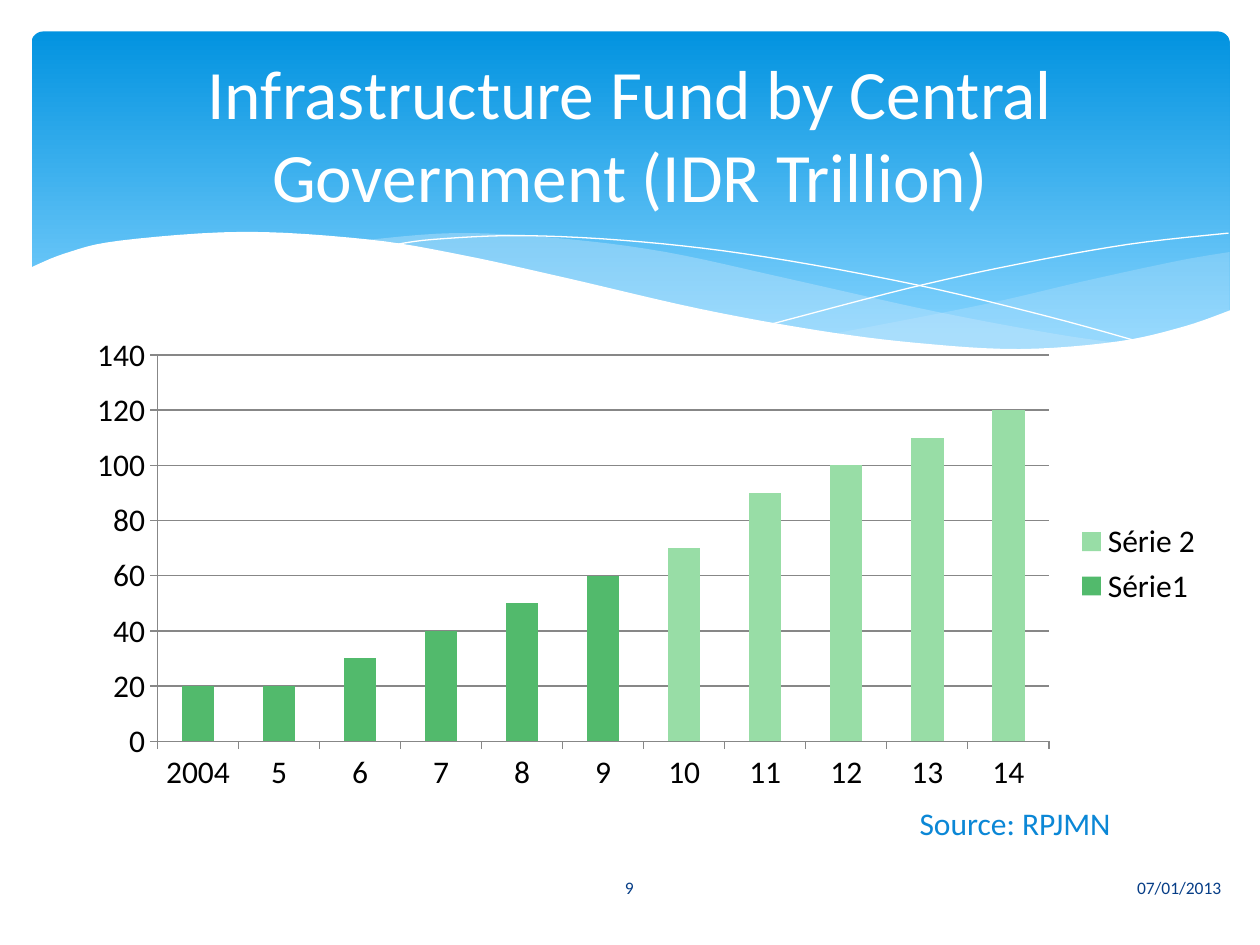
from lxml.etree import SubElement
from pptx import Presentation
from pptx.chart.data import CategoryChartData
from pptx.dml.color import RGBColor
from pptx.enum.chart import XL_CHART_TYPE, XL_LEGEND_POSITION, XL_TICK_MARK
from pptx.enum.shapes import MSO_SHAPE
from pptx.enum.text import MSO_ANCHOR, PP_ALIGN
from pptx.oxml.ns import qn
from pptx.util import Inches, Pt

FONT = "Calibri"
COLS, ROWS = 40, 30
STEPS = 6

YEARS = ["2004", *map(str, range(5, 15))]
SERIES = [
    ("Série1", [20, 20, 30, 40, 50, 60, 0, 0, 0, 0, 0], "52BA6C"),
    ("Série 2", [0, 0, 0, 0, 0, 0, 70, 90, 100, 110, 120], "98DDA6"),
]

# Wave anchors, as (column, row)
RIGHT_TOP = [(39.04, 8), (37.4, 8.28), (34.44, 8.92), (31.16, 9.68), (26.44, 10.6)]
RIGHT_LOW = [(26.44, 10.6), (28.76, 10.88), (32.12, 11.12), (35.24, 10.92),
             (37.4, 10.48), (39.04, 9.88)]
MID_TOP = [(11.44, 7.64), (14.44, 7.4), (17.68, 7.56), (21.12, 8), (25.16, 8.88),
           (29.64, 9.88), (33.48, 10.6), (35.72, 10.92)]
MID_LOW = [(35.72, 10.92), (32.72, 11.12), (29.92, 11.04), (26.6, 10.64),
           (22.64, 9.92), (17.96, 8.88), (14.48, 8.12), (11.44, 7.64)]
FALL = [(12.36, 7.8), (13.76, 7.6), (16.64, 7.48), (20.4, 7.68), (24.32, 8.16),
        (29.08, 9.04), (33.24, 10.04), (36.28, 10.88)]
RISE = [(24.52, 10.28), (28.8, 9.16), (32.24, 8.4), (35.8, 7.76), (39, 7.4)]
EDGE = [(0.92, 8.52), (2.08, 8.04), (3.8, 7.64), (7.72, 7.36), (11.68, 7.6),
        (14.6, 8.08), (17.88, 8.8), (22.2, 9.8), (25.92, 10.48), (29.04, 10.88),
        (32.36, 11.08), (35.48, 10.84), (37.6, 10.36), (39.08, 9.84)]
BASE = [(39.08, 13.16), (0.92, 13.16)]


def color(code):
    return RGBColor.from_string(code)


def curve(knots):
    """Return points on a Catmull-Rom spline through the knots."""
    ends = [knots[0], *knots, knots[-1]]
    points = []
    for a, b, c, d in zip(ends, ends[1:], ends[2:], ends[3:]):
        for step in range(STEPS):
            t = step / STEPS
            points.append(tuple(
                (2 * q + (r - p) * t + (2 * p - 5 * q + 4 * r - s) * t ** 2
                 + (3 * q - p - 3 * r + s) * t ** 3) / 2
                for p, q, r, s in zip(a, b, c, d)))
    return points + [knots[-1]]


class Deck:
    def __init__(self):
        self.prs = Presentation()
        self.prs.slide_width, self.prs.slide_height = Inches(10), Inches(7.5)
        self.slide = self.prs.slides.add_slide(self.prs.slide_layouts[6])
        self.shapes = self.slide.shapes

    def place(self, col, row):
        return (round(col * self.prs.slide_width / COLS),
                round(row * self.prs.slide_height / ROWS))

    def box(self, col, row, wide, high):
        return *self.place(col, row), *self.place(wide, high)

    def panel(self, area, top, bottom):
        shape = self.shapes.add_shape(MSO_SHAPE.ROUNDED_RECTANGLE, *self.box(*area))
        shape.shadow.inherit = False
        shape.adjustments[0] = 0.034
        shape.line.fill.background()
        shape.fill.gradient()
        shape.fill.gradient_angle = 270
        for stop, (spot, code) in zip(shape.fill.gradient_stops, [(0, top), (0.9, bottom)]):
            stop.position, stop.color.rgb = spot, color(code)

    def wave(self, points, fill=None, alpha=100, line=None):
        first, *rest = [self.place(*point) for point in points]
        path = self.shapes.build_freeform(*first)
        path.add_line_segments(rest, close=fill is not None)
        shape = path.convert_to_shape()
        shape.shadow.inherit = False
        for part, code in ((shape.fill, fill), (shape.line.fill, line)):
            if code:
                part.solid()
                part.fore_color.rgb = color(code)
            else:
                part.background()
        if line:
            shape.line.width = Pt(0)
        if alpha < 100:
            tint = shape.fill._xPr.find(".//" + qn("a:srgbClr"))
            SubElement(tint, qn("a:alpha"), val=str(alpha * 1000))

    def text(self, area, words, size, code, align, anchor=MSO_ANCHOR.MIDDLE, wrap=True):
        frame = self.shapes.add_textbox(*self.box(*area)).text_frame
        frame.word_wrap, frame.vertical_anchor = wrap, anchor
        para = frame.paragraphs[0]
        para.text, para.alignment = words, align
        style = {"name": FONT, "size": Pt(size)}
        for key, value in style.items():
            setattr(para.font, key, value)
        para.font.color.rgb = color(code)

    def chart(self, area, cats, series):
        data = CategoryChartData()
        data.categories = cats
        for name, values, _ in series:
            data.add_series(name, values)
        chart = self.shapes.add_chart(
            XL_CHART_TYPE.COLUMN_STACKED, *self.box(*area), data).chart
        chart.has_title = False
        chart.font.name, chart.font.size = FONT, Pt(18)
        chart.font.color.rgb = color("000000")
        chart.has_legend = True
        chart.legend.position = XL_LEGEND_POSITION.RIGHT
        chart.legend.include_in_layout = False
        plot = chart.plots[0]
        plot.gap_width, plot.overlap, plot.vary_by_categories = 150, 100, False
        for bars, (_, _, code) in zip(plot.series, series):
            bars.format.fill.solid()
            bars.format.fill.fore_color.rgb = color(code)
        scale = chart.value_axis
        scale.minimum_scale, scale.maximum_scale, scale.major_unit = 0, 140, 20
        scale.has_major_gridlines = True
        for axis in (chart.category_axis, scale):
            axis.major_tick_mark = XL_TICK_MARK.OUTSIDE
            axis.minor_tick_mark = XL_TICK_MARK.NONE
        for part in (chart.category_axis, scale, scale.major_gridlines):
            part.format.line.width = Pt(0.75)
            part.format.line.color.rgb = color("878787")


def main():
    deck = Deck()
    deck.panel((1, 1, 38.04, 10.8), "0293E0", "83D3FE")
    deck.wave(curve(RIGHT_TOP) + curve(RIGHT_LOW), "C6E7FC", 29)
    deck.wave(curve(MID_TOP) + curve(MID_LOW), "C6E7FC", 40)
    for knots in (FALL, RISE):
        deck.wave(curve(knots), line="FFFFFF")
    deck.wave(curve(EDGE) + BASE, "FFFFFF")
    deck.text((2, 1.48, 36, 5.48), "Infrastructure Fund by Central Government (IDR Trillion)",
              39.6, "FFFFFF", PP_ALIGN.CENTER)
    deck.chart((2.36, 10.36, 36.24, 15.08), YEARS, SERIES)
    deck.text((28.8, 25.32, 7.32, 1.6), "Source: RPJMN", 18, "0B87D6",
              PP_ALIGN.LEFT, MSO_ANCHOR.TOP, False)
    deck.text((22.6, 27.36, 16.56, 1.6), "07/01/2013", 10, "073E87", PP_ALIGN.RIGHT)
    deck.text((17.44, 27.36, 5.08, 1.6), "9", 10, "073E87", PP_ALIGN.CENTER)
    deck.prs.save("out.pptx")


if __name__ == "__main__":
    main()
